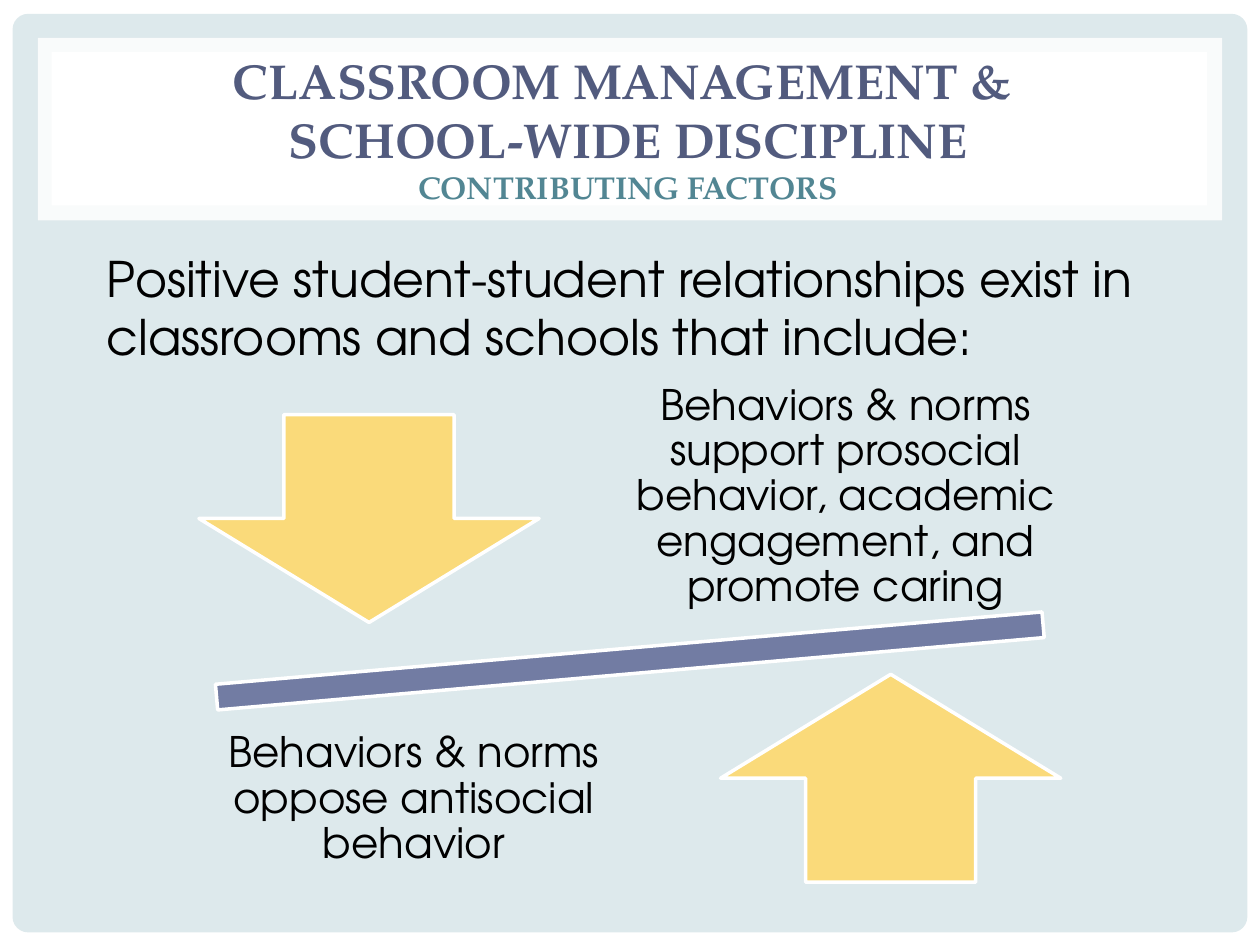
import pptx
import pptx.dml.color
import pptx.enum.shapes
import pptx.enum.text
import pptx.oxml
import pptx.oxml.ns
import pptx.util

Pt = pptx.util.Pt
RGBColor = pptx.dml.color.RGBColor
SHAPES = pptx.enum.shapes.MSO_SHAPE
ALIGN = pptx.enum.text.PP_ALIGN
ANCHOR = pptx.enum.text.MSO_ANCHOR

WHITE = RGBColor(0xFF, 0xFF, 0xFF)
BLACK = RGBColor(0x00, 0x00, 0x00)
PALE_BLUE = RGBColor(0xDD, 0xE9, 0xEC)
YELLOW = RGBColor(0xFA, 0xDA, 0x7A)
PURPLE = RGBColor(0x72, 0x7C, 0xA3)
DARK_PURPLE = RGBColor(0x52, 0x5B, 0x7E)
TEAL = RGBColor(0x52, 0x86, 0x93)
BODY_FONT = "TeX Gyre Adventor"
TITLE_FONT = "TeX Gyre Pagella"


def add_filled_shape(slide, kind, left, top, width, height, color, outlined=False):
    shape = slide.shapes.add_shape(kind, Pt(left), Pt(top), Pt(width), Pt(height))
    shape.shadow.inherit = False
    shape.fill.solid()
    shape.fill.fore_color.rgb = color
    if outlined:
        shape.line.color.rgb = WHITE
        shape.line.width = Pt(2)
    else:
        shape.line.fill.background()
    return shape


def set_opacity(shape, percent):
    color = shape.fill._xPr.find(".//" + pptx.oxml.ns.qn("a:srgbClr"))
    color.append(pptx.oxml.parse_xml(
        f'<a:alpha {pptx.oxml.ns.nsdecls("a")} val="{percent * 1000}"/>'))


def style_paragraph(paragraph, size, font, color, bold=False):
    for run in paragraph.runs:
        run.font.size = Pt(size)
        run.font.name = font
        run.font.color.rgb = color
        run.font.bold = bold


def add_text(slide, text, left, top, width, height):
    box = slide.shapes.add_textbox(Pt(left), Pt(top), Pt(width), Pt(height))
    box.text_frame.word_wrap = True
    box.text_frame.text = text
    return box.text_frame


def add_backdrop(slide, width, height):
    slide.background.fill.solid()
    slide.background.fill.fore_color.rgb = PALE_BLUE
    add_filled_shape(slide, SHAPES.RECTANGLE, 0, 0, width, height, WHITE)
    panel = add_filled_shape(slide, SHAPES.ROUNDED_RECTANGLE, 7.2, 7.9,
                             width - 14.4, height - 15.1, PALE_BLUE)
    panel.adjustments[0] = 0.017


def add_title_band(slide, left, top, width, height):
    frame = add_filled_shape(slide, SHAPES.RECTANGLE, left, top, width, height, WHITE)
    set_opacity(frame, 83)
    add_filled_shape(slide, SHAPES.RECTANGLE, left + 8, top + 8,
                     width - 16.6, height - 16.6, WHITE)
    lines = [
        ("CLASSROOM MANAGEMENT & ", 28, DARK_PURPLE),
        ("SCHOOL-WIDE DISCIPLINE", 28, DARK_PURPLE),
        ("CONTRIBUTING FACTORS", 18, TEAL),
    ]
    title = add_text(slide, "\n".join(line[0] for line in lines),
                     left + 12.2, top + 10.8, 650.2, 82.1)
    title.vertical_anchor = ANCHOR.MIDDLE
    for paragraph, (_, size, color) in zip(title.paragraphs, lines):
        paragraph.alignment = ALIGN.CENTER
        style_paragraph(paragraph, size, TITLE_FONT, color, bold=True)


def add_introduction(slide, left, top, width, height):
    introduction = add_text(
        slide,
        "Positive student-student relationships exist in classrooms and schools that include:",
        left, top, width, height)
    style_paragraph(introduction.paragraphs[0], 28, BODY_FONT, BLACK)


def add_balance_label(slide, text, left, top, width, height):
    label = add_text(slide, text, left, top, width, height)
    label.vertical_anchor = ANCHOR.MIDDLE
    label.margin_left = label.margin_right = Pt(13.7)
    label.margin_top = label.margin_bottom = Pt(13.7)
    paragraph = label.paragraphs[0]
    paragraph.alignment = ALIGN.CENTER
    paragraph.line_spacing = 0.9
    style_paragraph(paragraph, 24, BODY_FONT, BLACK)


def add_balance_diagram(slide, left, top, width, height):
    arrow_width, arrow_height = 194.4, 118.8
    label_height = 124.6
    bar = add_filled_shape(slide, SHAPES.MATH_MINUS, left, top + label_height,
                           width, 62.6, PURPLE, outlined=True)
    bar.rotation = 355
    add_filled_shape(slide, SHAPES.DOWN_ARROW, left + 76.3, top + 15.1,
                     arrow_width, arrow_height, YELLOW, outlined=True)
    add_balance_label(
        slide,
        "Behaviors & norms support prosocial behavior, academic engagement, and promote caring",
        left + 298.8, top, 293.8, label_height)
    add_filled_shape(slide, SHAPES.UP_ARROW, left + width - 76.3 - arrow_width,
                     top + height - 15.1 - arrow_height,
                     arrow_width, arrow_height, YELLOW, outlined=True)
    add_balance_label(slide, "Behaviors & norms oppose antisocial behavior",
                      left + 58.3, top + height - label_height, 281.5, label_height)


def main():
    presentation = pptx.Presentation()
    presentation.slide_width = Pt(720)
    presentation.slide_height = Pt(540)
    slide = presentation.slides.add_slide(presentation.slide_layouts[6])
    add_backdrop(slide, 720, 540)
    add_title_band(slide, 21.6, 21.6, 676.8, 104.4)
    add_balance_diagram(slide, 37.4, 221.8, 645.1, 297.4)
    add_introduction(slide, 54, 138.2, 642.2, 97.2)
    presentation.save("out.pptx")


if __name__ == "__main__":
    main()
